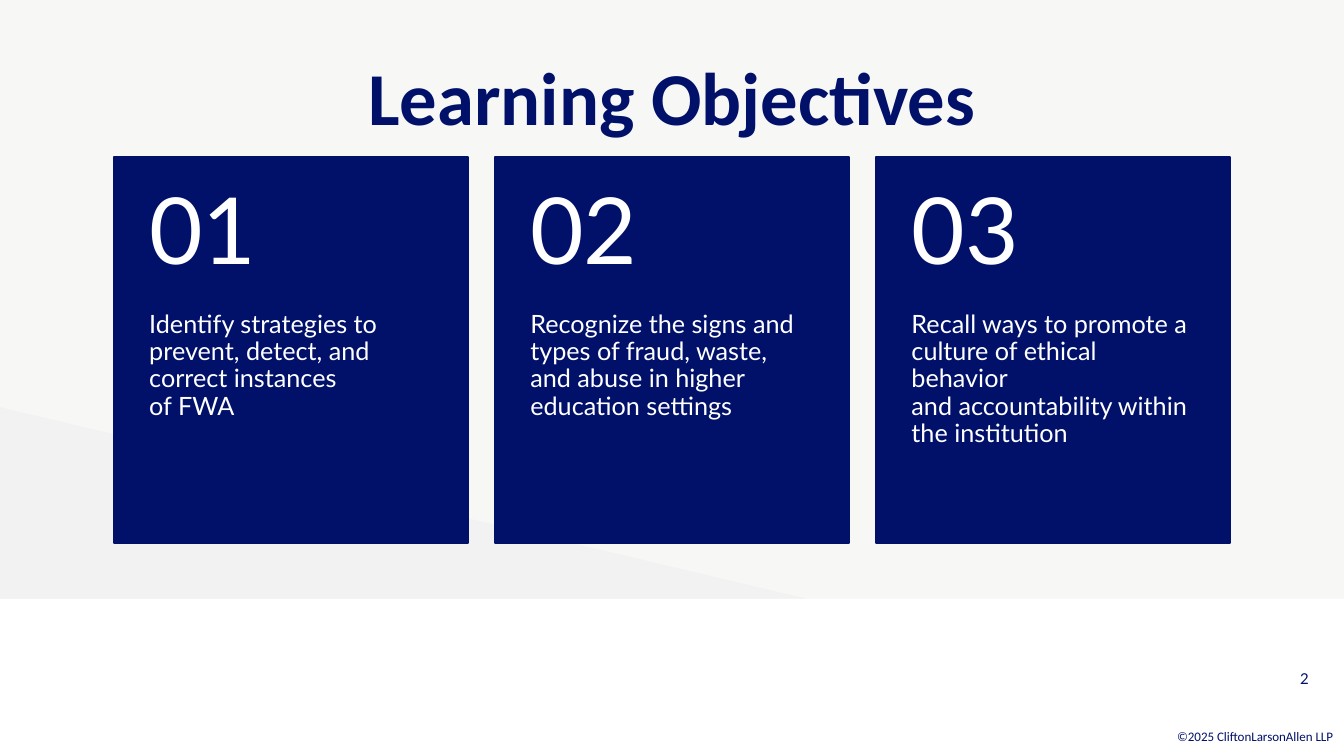
from pptx import Presentation
from pptx.dml.color import RGBColor
from pptx.enum.shapes import MSO_SHAPE
from pptx.enum.text import MSO_ANCHOR, PP_ALIGN
from pptx.util import Inches, Pt

NAVY = RGBColor(0x01, 0x11, 0x69)
WHITE = RGBColor(0xFF, 0xFF, 0xFF)
PALE_GREY = RGBColor(0xF7, 0xF7, 0xF6)
LIGHT_GREY = RGBColor(0xF2, 0xF2, 0xF2)

SLIDE_WIDTH, SLIDE_HEIGHT = 13.33, 7.5
PANEL_HEIGHT = 5.94
TRIANGLE_HEIGHT = 1.9
MARGIN = 1.13
CONTENT_WIDTH = SLIDE_WIDTH - 2 * MARGIN
CARD_TOP, CARD_WIDTH, CARD_HEIGHT = 1.56, 3.51, 3.83
NUMBER_HEIGHT = 0.4 * CARD_HEIGHT

OBJECTIVES = [
    "Identify strategies to prevent, detect, and correct instances \nof FWA",
    "Recognize the signs and types of fraud, waste, and abuse in higher education settings",
    "Recall ways to promote a culture of ethical behavior \n"
    "and accountability within the institution",
]

presentation = Presentation()
presentation.slide_width = Inches(SLIDE_WIDTH)
presentation.slide_height = Inches(SLIDE_HEIGHT)
slide = presentation.slides.add_slide(presentation.slide_layouts[6])


def add_block(kind, left, top, width, height, color):
    """Add a flat shape whose outline has the colour of its fill."""
    shape = slide.shapes.add_shape(
        kind, Inches(left), Inches(top), Inches(width), Inches(height))
    shape.shadow.inherit = False
    shape.fill.solid()
    shape.fill.fore_color.rgb = color
    shape.line.fill.background()
    return shape


def add_text(text, left, top, width, height, size, font="Lato", color=NAVY, bold=False,
             align=PP_ALIGN.LEFT, anchor=MSO_ANCHOR.MIDDLE, spacing=1.0,
             insets=(0.1, 0.05, 0.1, 0.05)):
    """Add a wrapped text box; insets run left, top, right, bottom."""
    box = slide.shapes.add_textbox(
        Inches(left), Inches(top), Inches(width), Inches(height))
    frame = box.text_frame
    frame.word_wrap = True
    frame.vertical_anchor = anchor
    frame.margin_left, frame.margin_top, frame.margin_right, frame.margin_bottom = map(
        Inches, insets)
    paragraph = frame.paragraphs[0]
    paragraph.text = text
    paragraph.alignment = align
    paragraph.line_spacing = spacing
    for run in paragraph.runs:
        run.font.name = font
        run.font.size = Pt(size)
        run.font.bold = bold
        run.font.color.rgb = color


# Background
add_block(MSO_SHAPE.RECTANGLE, 0, 0, SLIDE_WIDTH, PANEL_HEIGHT, PALE_GREY)
add_block(MSO_SHAPE.RIGHT_TRIANGLE, 0, PANEL_HEIGHT - TRIANGLE_HEIGHT,
          0.6 * SLIDE_WIDTH, TRIANGLE_HEIGHT, LIGHT_GREY)

# Footer
add_text("2", 12.5, 6.48, 0.58, 0.5, 10.7, align=PP_ALIGN.RIGHT)
add_text("©2025 CliftonLarsonAllen LLP", 11.43, 7.18, 1.89, 0.26, 9.3, font="Calibri",
         align=PP_ALIGN.RIGHT)

# Title
add_text("Learning Objectives", MARGIN, 0.48, CONTENT_WIDTH, 0.97, 53.3, font="Calibri",
         bold=True, align=PP_ALIGN.CENTER, anchor=MSO_ANCHOR.BOTTOM, spacing=0.9)

# Numbered cards, spread evenly between the margins
card_step = (CONTENT_WIDTH - CARD_WIDTH) / (len(OBJECTIVES) - 1)
for index, objective in enumerate(OBJECTIVES):
    left = MARGIN + index * card_step
    card = add_block(MSO_SHAPE.RECTANGLE, left, CARD_TOP, CARD_WIDTH, CARD_HEIGHT, NAVY)
    card.line.color.rgb = NAVY
    card.line.width = Pt(1.5)
    add_text(objective, left, CARD_TOP + NUMBER_HEIGHT, CARD_WIDTH,
             CARD_HEIGHT - NUMBER_HEIGHT, 18, color=WHITE, anchor=MSO_ANCHOR.TOP,
             spacing=0.9, insets=(0.35, 0, 0.35, 0.36))
    add_text(f"{index + 1:02}", left, CARD_TOP, CARD_WIDTH, NUMBER_HEIGHT, 66,
             color=WHITE, spacing=0.9, insets=(0.35, 0.18, 0.35, 0.18))

presentation.save("out.pptx")
